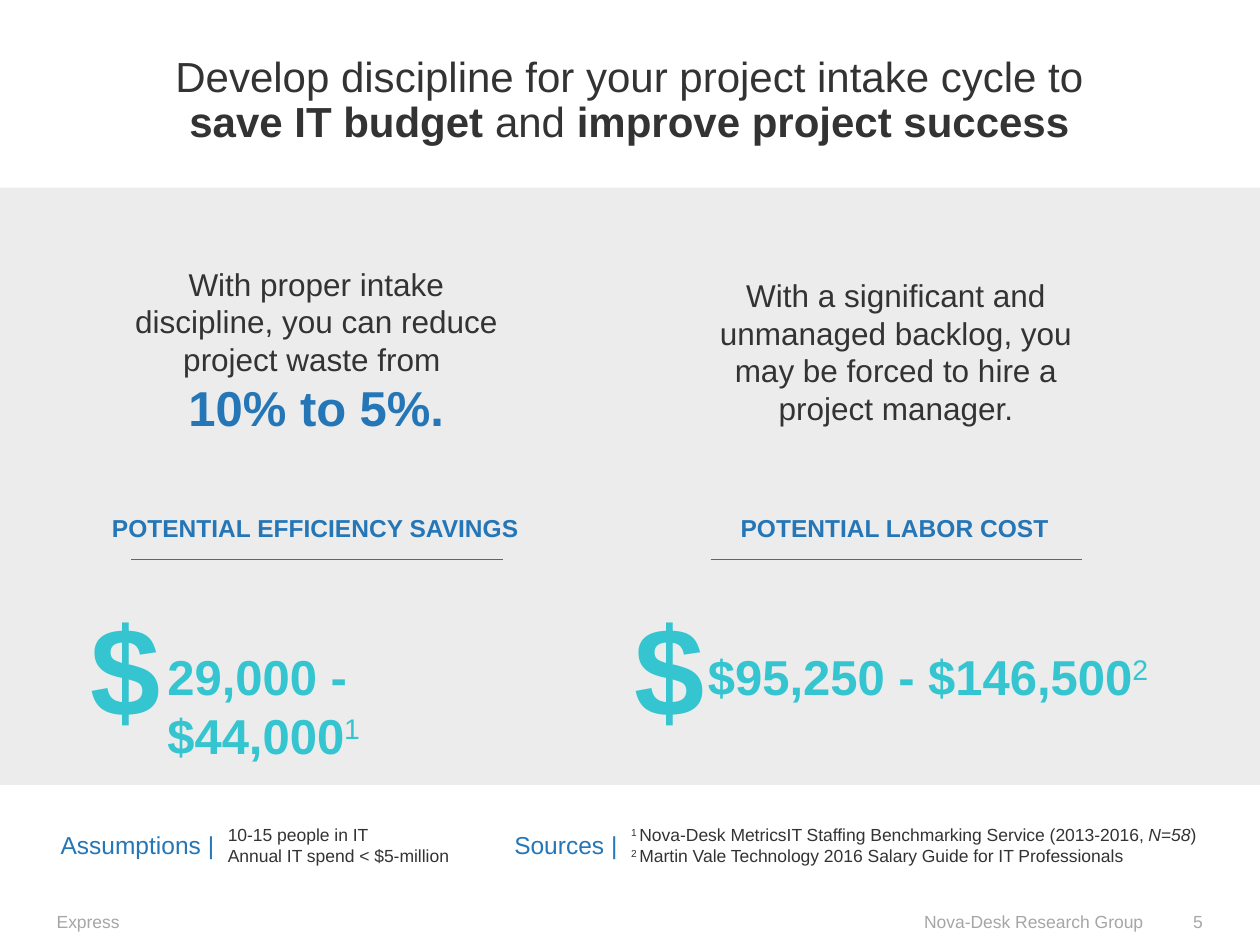
"""Build the project intake savings slide."""
from dataclasses import dataclass, replace
from typing import NamedTuple

from lxml import etree
from pptx import Presentation
from pptx import util as u
from pptx.dml.color import RGBColor
from pptx.enum import shapes, text
from pptx.oxml.ns import qn

COLUMNS, ROWS = 100, 75
INK, BLUE, TEAL, PANEL, MUTED = "333333", "2576B7", "34C5D0", "ECECEC", "A6A6A6"
LEFT, CENTER, RIGHT = text.PP_ALIGN.LEFT, text.PP_ALIGN.CENTER, text.PP_ALIGN.RIGHT
TOP, MIDDLE = text.MSO_ANCHOR.TOP, text.MSO_ANCHOR.MIDDLE

deck = Presentation()
deck.slide_width, deck.slide_height = u.Inches(10), u.Inches(7.5)
slide = deck.slides.add_slide(deck.slide_layouts[5])


class Area(NamedTuple):
    """A rectangle in grid columns and rows."""
    column: float
    row: float
    columns: float
    rows: float


@dataclass(frozen=True)
class Run:
    """A stretch of text with one format."""
    words: str
    size: float = 10
    color: str = INK
    bold: bool = False
    italic: bool = False
    raised: bool = False


@dataclass(frozen=True)
class Benefit:
    """One half of the panel: its message, heading, rule and amount."""
    message: list[list[Run]]
    message_area: Area
    heading: str
    heading_area: Area
    rule_column: float
    amount: str
    note: str
    amount_area: Area
    amount_wraps: bool
    sign_area: Area


def across(columns: float) -> int:
    """Turn grid columns into a length."""
    return round(deck.slide_width * columns / COLUMNS)


def down(rows: float) -> int:
    """Turn grid rows into a length."""
    return round(deck.slide_height * rows / ROWS)


def spans(area: Area) -> tuple[int, int, int, int]:
    """Turn a grid area into left, top, width and height."""
    return across(area.column), down(area.row), across(area.columns), down(area.rows)


def rgb(color: str) -> RGBColor:
    """Read a colour from its hex string."""
    return RGBColor.from_string(color)


def add_run(paragraph, run: Run) -> None:
    """Append a formatted run to a paragraph."""
    piece = paragraph.add_run()
    piece.text = run.words
    font = piece.font
    font.name, font.size = "Arial", u.Pt(run.size)
    font.bold, font.italic = run.bold, run.italic
    font.color.rgb = rgb(run.color)
    if run.raised:
        piece._r.get_or_add_rPr().set("baseline", "30000")


def write(area: Area, lines: list[list[Run]], *, align=LEFT, anchor=TOP, wrap: bool = True,
          inset: float = 1, end_inset: float = 1) -> None:
    """Place a text box whose insets are given in columns."""
    frame = slide.shapes.add_textbox(*spans(area)).text_frame
    frame.word_wrap, frame.vertical_anchor = wrap, anchor
    frame.margin_left, frame.margin_right = across(inset), across(end_inset)
    for index, runs in enumerate(lines):
        paragraph = frame.add_paragraph() if index else frame.paragraphs[0]
        paragraph.alignment = align
        for run in runs:
            add_run(paragraph, run)


def draw_rule(column: float, row: float, columns: float) -> None:
    """Draw a thin horizontal rule."""
    rule = slide.shapes.add_connector(shapes.MSO_CONNECTOR.STRAIGHT, across(column), down(row),
                                      across(column + columns), down(row))
    rule.line.color.rgb, rule.line.width = rgb(BLUE), u.Pt(0.75)
    etree.SubElement(rule._element.spPr, qn("a:effectLst"))


def draw_panel(area: Area) -> None:
    """Draw the grey band behind the benefits."""
    panel = slide.shapes.add_shape(shapes.MSO_SHAPE.RECTANGLE, *spans(area))
    panel.shadow.inherit = False
    panel.fill.solid()
    panel.fill.fore_color.rgb = rgb(PANEL)
    panel.line.fill.background()


def set_title(area: Area) -> None:
    """Fill and place the title placeholder."""
    title = slide.shapes.title
    title.left, title.top, title.width, title.height = spans(area)
    frame = title.text_frame
    frame.auto_size, frame.vertical_anchor = text.MSO_AUTO_SIZE.NONE, MIDDLE
    paragraph = frame.paragraphs[0]
    paragraph.alignment, paragraph.line_spacing = CENTER, u.Pt(26)
    plain = Run("Develop discipline for your project intake cycle to", 24)
    add_run(paragraph, plain)
    paragraph.add_line_break()
    for words, bold in (("save IT budget", True), (" and ", False),
                        ("improve project success", True)):
        add_run(paragraph, replace(plain, words=words, bold=bold))


def draw_benefit(benefit: Benefit) -> None:
    """Draw one benefit from message to amount."""
    write(benefit.message_area, benefit.message, align=CENTER)
    write(benefit.heading_area, [[Run(benefit.heading, 14, BLUE, bold=True)]], wrap=False)
    draw_rule(benefit.rule_column, 44.4, 29.5)
    amount = Run(benefit.amount, 28, TEAL, bold=True)
    write(benefit.amount_area, [[amount, Run(benefit.note, 28, TEAL, raised=True)]],
          wrap=benefit.amount_wraps, end_inset=9 if benefit.amount_wraps else 1)
    write(benefit.sign_area, [[Run("$", 72, TEAL, bold=True)]], anchor=MIDDLE)


BENEFITS = [
    Benefit([[Run("With proper intake discipline, you can reduce project waste from ", 18)],
             [Run("10% to 5%.", 28, BLUE, bold=True)]], Area(9.5, 20.5, 31.2, 14.8),
            "POTENTIAL EFFICIENCY SAVINGS", Area(7.9, 40.2, 34.5, 3.4), 10.4,
            "29,000 - $44,000", "1", Area(12.3, 50.8, 31.7, 4.8), True,
            Area(6.2, 46.3, 9, 13.1)),
    Benefit([[Run("With a significant and unmanaged backlog, you may be forced to hire "
                  "a project manager.", 18)]], Area(54.5, 21.4, 33.2, 13.1),
            "POTENTIAL LABOR COST", Area(57.8, 40.2, 26.6, 3.4), 56.4,
            "$95,250 - $146,500", "2", Area(55.2, 50.8, 37.6, 5.7), False,
            Area(49.4, 46.3, 8.6, 13.1)),
]
ASSUMPTIONS = [[Run("10-15 people in IT")], [Run("Annual IT spend < $5-million")]]
SOURCES = [
    [Run("1 ", raised=True),
     Run("Nova-Desk MetricsIT Staffing Benchmarking Service (2013-2016, "),
     Run("N=58", italic=True), Run(")")],
    [Run("2 ", raised=True), Run("Martin Vale Technology 2016 Salary Guide for IT Professionals")],
]


def main() -> None:
    """Compose the slide and save it."""
    draw_panel(Area(0, 14.9, 100, 47.4))
    set_title(Area(2.8, 3.3, 94.3, 9.4))
    for benefit in BENEFITS:
        draw_benefit(benefit)
    for label, column in (("Assumptions |", 0), ("Sources |", 32)):
        write(Area(column, 65.4, 18, 3.4), [[Run(label, 14, BLUE)]], align=RIGHT)
    write(Area(17.1, 64.9, 30, 4.4), ASSUMPTIONS)
    write(Area(49.1, 64.9, 50.9, 4.4), SOURCES)
    write(Area(0, 71.3, 45, 3.7), [[Run("Express", color=MUTED)]], anchor=MIDDLE, inset=4.5)
    write(Area(45, 71.3, 46.7, 3.7), [[Run("Nova-Desk Research Group", color=MUTED)]],
          align=RIGHT, anchor=MIDDLE)
    write(Area(91.7, 71.3, 8.3, 3.7), [[Run("5", color=MUTED)]], anchor=MIDDLE, inset=3)
    deck.save("out.pptx")


if __name__ == "__main__":
    main()
